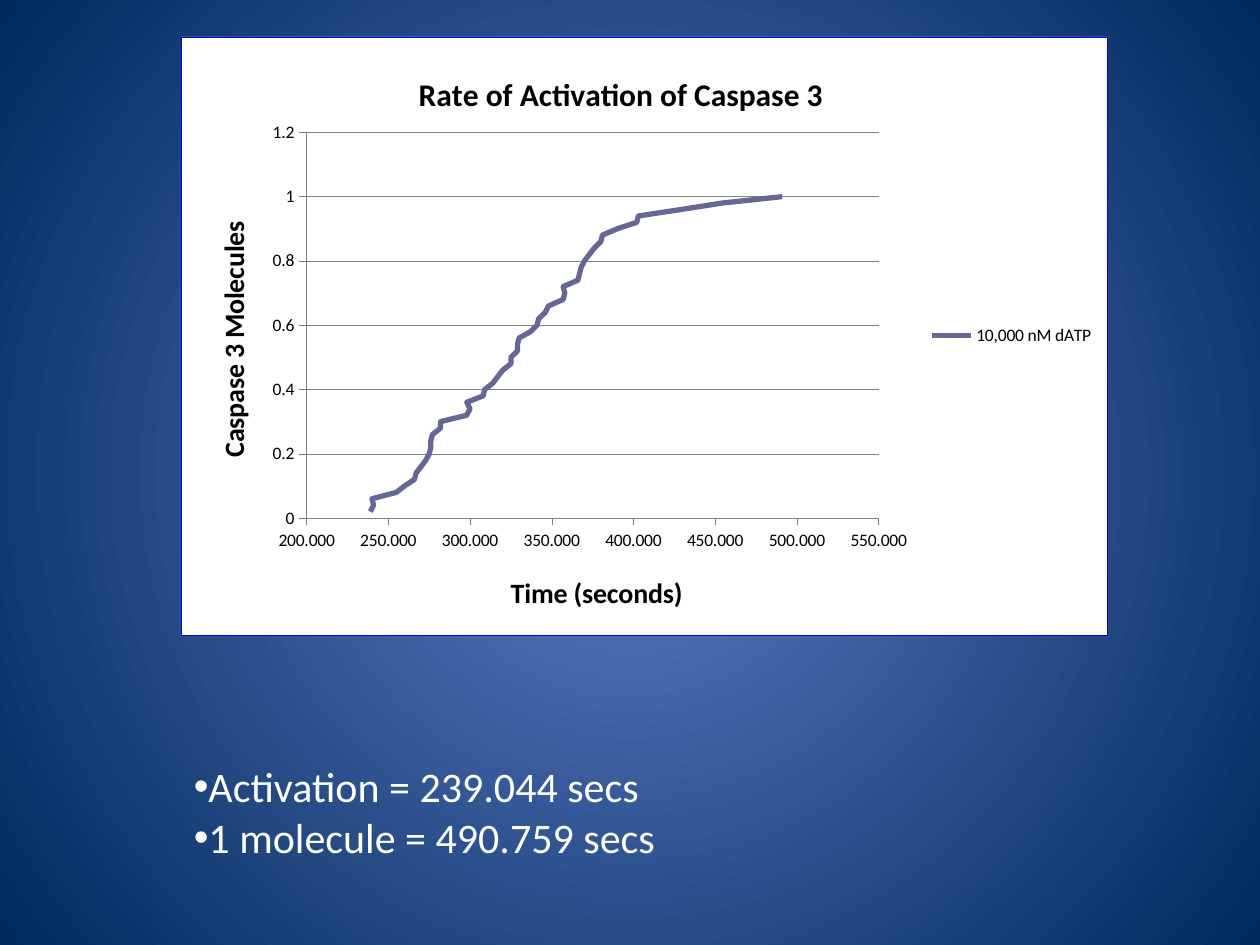
from lxml import etree
from pptx import Presentation
from pptx.chart.data import XyChartData
from pptx.dml.color import RGBColor
from pptx.enum import chart as charts, text
from pptx.oxml import parse_xml
from pptx.oxml.ns import nsdecls, qn
from pptx.util import Inches, Pt

BLACK = RGBColor(0x00, 0x00, 0x00)
WHITE = RGBColor(0xFF, 0xFF, 0xFF)
GREY = RGBColor(0x80, 0x80, 0x80)
BLUE = RGBColor(0x00, 0x00, 0xFF)
CURVE = RGBColor(0x66, 0x66, 0x99)
GLOW = RGBColor(0x5E, 0x7C, 0xC5)
NAVY = RGBColor(0x00, 0x29, 0x5C)

# Seconds at which each further 0.02 of the molecules is active
TIMES = [
    239, 241, 240, 255, 260, 266, 267, 270, 273, 275,
    276, 276, 277, 282, 282, 298, 300, 298, 308, 309,
    314, 317, 320, 325, 325, 329, 329, 330, 337, 341,
    342, 346, 348, 357, 358, 357, 366, 367, 368, 370,
    373, 376, 380, 381, 390, 402, 403, 429, 454, 491,
]
STEP = 0.02
FINDINGS = ["Activation = 239.044 secs", "1 molecule = 490.759 secs"]


def apply(target, **values):
    for name, value in values.items():
        setattr(target, name, value)


def style_font(font, size, color, bold=False):
    apply(font, name="Calibri", size=Pt(size), bold=bold)
    font.color.rgb = color


def style_line(line, color, width):
    line.color.rgb = color
    line.width = Pt(width)


def paint_background(page):
    fill = page.background.fill
    fill.gradient()
    for stop, color in zip(fill.gradient_stops, (GLOW, NAVY)):
        stop.color.rgb = color
    for stop, position in zip(fill.gradient_stops, (0, 1)):
        stop.position = position
    # Radial gradient from the middle of the slide
    gradient = page.background._cSld.find(".//" + qn("a:gradFill"))
    linear = gradient.find(qn("a:lin"))
    radial = parse_xml(
        f'<a:path {nsdecls("a")} path="circle">'
        '<a:fillToRect l="50000" t="50000" r="50000" b="50000"/></a:path>')
    gradient.replace(linear, radial)


def set_layout(parent, index, inner=False, **fractions):
    """Place a chart part by fractions of the chart area."""
    for old in parent.findall(qn("c:layout")):
        parent.remove(old)
    layout = etree.Element(qn("c:layout"))
    manual = etree.SubElement(layout, qn("c:manualLayout"))
    settings = {"layoutTarget": "inner"} if inner else {}
    settings.update(xMode="edge", yMode="edge", **fractions)
    for tag, value in settings.items():
        etree.SubElement(manual, qn("c:" + tag), val=str(value))
    parent.insert(index, layout)


def add_title(owner, words, size, x, y):
    title = owner.chart_title if hasattr(owner, "chart_title") else owner.axis_title
    title.text_frame.text = words
    span = title.text_frame.paragraphs[0].runs[0]
    style_font(span.font, size, BLACK, bold=True)
    set_layout(title._element, 1, x=x, y=y)


def style_axis(axis, low, high, unit, number_format, grid):
    apply(axis, minimum_scale=low, maximum_scale=high, major_unit=unit,
          has_major_gridlines=grid,
          major_tick_mark=charts.XL_TICK_MARK.OUTSIDE,
          minor_tick_mark=charts.XL_TICK_MARK.NONE)
    apply(axis.tick_labels, number_format=number_format,
          number_format_is_linked=False)
    style_font(axis.tick_labels.font, 10, BLACK)
    style_line(axis.format.line, GREY, 0.25)
    if grid:
        style_line(axis.major_gridlines.format.line, GREY, 0.25)


def frame_xml(tag, fill, border=None):
    line = (f'<a:ln w="{Pt(0.25)}"><a:solidFill><a:srgbClr val="{border}"/>'
            '</a:solidFill></a:ln>') if border else '<a:ln><a:noFill/></a:ln>'
    return parse_xml(
        f'<c:{tag} {nsdecls("c", "a")}><a:solidFill><a:srgbClr val="{fill}"/>'
        f'</a:solidFill>{line}</c:{tag}>')


def add_activation_chart(page):
    data = XyChartData()
    points = data.add_series("10,000 nM dATP")
    for count, seconds in enumerate(TIMES, start=1):
        points.add_data_point(seconds, round(count * STEP, 2))
    chart = page.shapes.add_chart(
        charts.XL_CHART_TYPE.XY_SCATTER_SMOOTH_NO_MARKERS,
        Inches(1.44), Inches(0.29), Inches(7.35), Inches(4.75), data).chart
    style_font(chart.font, 10, BLACK)

    # Curve
    plot = chart.plots[0]
    plot.vary_by_categories = False
    series = plot.series[0]
    series.smooth = True
    series.marker.style = charts.XL_MARKER_STYLE.NONE
    style_line(series.format.line, CURVE, 3)

    # Axes and titles
    style_axis(chart.category_axis, 200, 550, 50, "0.000", grid=False)
    style_axis(chart.value_axis, 0, 1.2, 0.2, "General", grid=True)
    add_title(chart, "Rate of Activation of Caspase 3", 18, 0.25, 0.05)
    add_title(chart.category_axis, "Time (seconds)", 16, 0.35, 0.89)
    add_title(chart.value_axis, "Caspase 3 Molecules", 16, 0.03, 0.3)

    # Legend
    chart.has_legend = True
    apply(chart.legend, position=charts.XL_LEGEND_POSITION.RIGHT,
          include_in_layout=False)
    style_font(chart.legend.font, 10, BLACK)

    # White panel with a thin border
    space = chart._chartSpace
    space.find(qn("c:chart")).addnext(frame_xml("spPr", WHITE, BLUE))
    area = space.find(".//" + qn("c:plotArea"))
    area.append(frame_xml("spPr", WHITE))
    set_layout(area, 0, inner=True, x=0.135, y=0.16, w=0.618, h=0.645)


def add_findings(page):
    box = page.shapes.add_textbox(
        Inches(1.44), Inches(5.99), Inches(3.88), Inches(0.91))
    frame = box.text_frame
    apply(frame, word_wrap=False,
          auto_size=text.MSO_AUTO_SIZE.SHAPE_TO_FIT_TEXT)
    frame.text = "\n".join(FINDINGS)
    for para in frame.paragraphs:
        style_font(para.runs[0].font, 24, WHITE)
        bullet = para._p.get_or_add_pPr()
        etree.SubElement(bullet, qn("a:buFont"), typeface="Arial")
        etree.SubElement(bullet, qn("a:buChar"), char="•")


def main():
    deck = Presentation()
    apply(deck, slide_width=Inches(10), slide_height=Inches(7.5))
    page = deck.slides.add_slide(deck.slide_layouts[6])
    paint_background(page)
    add_activation_chart(page)
    add_findings(page)
    deck.save("out.pptx")


if __name__ == "__main__":
    main()
